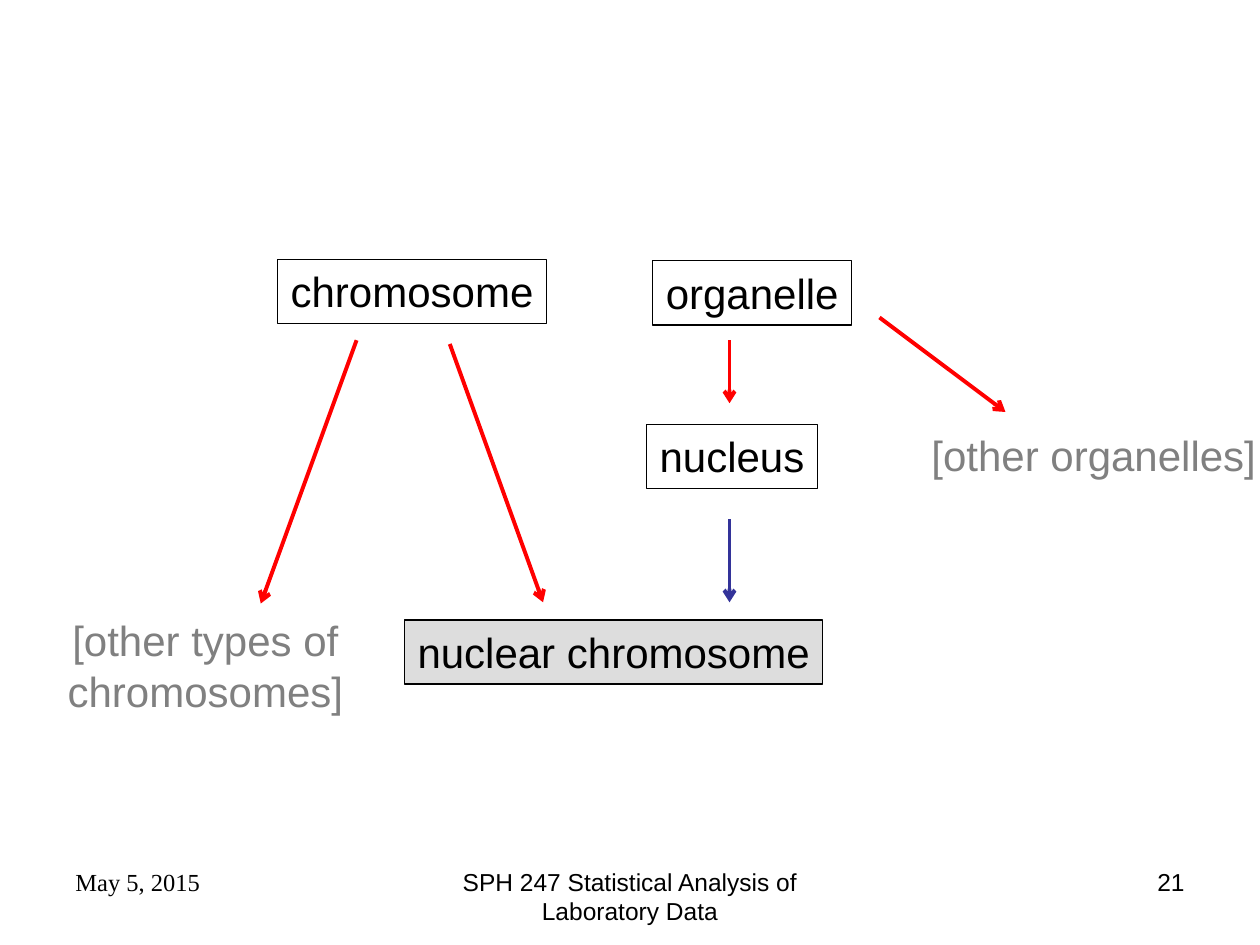
from lxml.etree import SubElement
from pptx import Presentation
from pptx.dml.color import RGBColor
from pptx.enum.shapes import MSO_CONNECTOR, MSO_SHAPE
from pptx.enum.text import MSO_ANCHOR, PP_ALIGN as Align
from pptx.oxml.ns import qn
from pptx.util import Inches, Pt

COLORS = {"ink": "000000", "muted": "808080", "result": "DDDDDD",
          "is_a": "FF0000", "part_of": "333399"}
BODY = {"size": Pt(24), "name": "Arial"}
FOOTER = {"size": Pt(14), "name": "Arial"}
DATE = {"size": Pt(14), "name": "Times New Roman"}


def color(name):
    """Return the named palette colour."""
    return RGBColor.from_string(COLORS[name])


def write(shape, text, font, align, ink="ink", wrap=True, anchor=MSO_ANCHOR.TOP):
    """Put one formatted paragraph into a shape."""
    frame = shape.text_frame
    frame.word_wrap = wrap
    frame.vertical_anchor = anchor
    para = frame.paragraphs[0]
    para.alignment = align
    span = para.add_run()
    span.text = text
    for key, value in font.items():
        setattr(span.font, key, value)
    span.font.color.rgb = color(ink)


def add_label(page, box, text, font, align, **options):
    """Add plain text in a box given in inches."""
    label = page.shapes.add_textbox(*map(Inches, box))
    write(label, text, font, align, **options)


def add_term(page, box, text, fill=None):
    """Add an outlined term in a box given in inches."""
    term = page.shapes.add_shape(MSO_SHAPE.RECTANGLE, *map(Inches, box))
    term.shadow.inherit = False
    if fill:
        term.fill.solid()
        term.fill.fore_color.rgb = color(fill)
    else:
        term.fill.background()
    term.line.color.rgb = color("ink")
    term.line.width = Pt(0.75)
    write(term, text, BODY, Align.CENTER, wrap=False)


def add_arrow(page, start, end, relation):
    """Add an arrow coloured by its relation."""
    arrow = page.shapes.add_connector(
        MSO_CONNECTOR.STRAIGHT, *map(Inches, start + end))
    arrow.line.color.rgb = color(relation)
    arrow.line.width = Pt(2.25)
    SubElement(arrow.line._get_or_add_ln(), qn("a:tailEnd"), type="arrow")
    SubElement(arrow._element.spPr, qn("a:effectLst"))


def add_graph(page, box):
    """Draw the term graph relative to its box."""
    left, top, width, height = box
    terms = [
        (1.97, 0, 2.14, "chromosome", None),
        (4.95, 0.01, 1.58, "organelle", None),
        (4.9, 1.31, 1.36, "nucleus", None),
        (2.98, 2.86, 3.32, "nuclear chromosome", "result"),
    ]
    others = [
        (0, 2.77, 2.8, 0.9, "[other types of chromosomes]", True),
        (7.06, 1.3, 2.78, 0.5, "[other organelles]", False),
    ]
    arrows = [
        (2.6, 0.64, 1.84, 2.73, "is_a"),
        (3.34, 0.67, 4.08, 2.72, "is_a"),
        (5.56, 0.64, 5.56, 1.14, "is_a"),
        (6.75, 0.46, 7.75, 1.21, "is_a"),
        (5.56, 2.06, 5.56, 2.72, "part_of"),
    ]
    for x, y, wide, text, fill in terms:
        add_term(page, (left + x, top + y, wide, 0.51), text, fill)
    for x, y, wide, high, text, wrap in others:
        add_label(page, (left + x, top + y, wide, high), text, BODY,
                  Align.CENTER, ink="muted", wrap=wrap)
    for x1, y1, x2, y2, relation in arrows:
        add_arrow(page, (left + x1, top + y1), (left + x2, top + y2), relation)


def add_footer(page, box):
    """Place date, course and page number across the box."""
    left, top, width, height = box
    side, middle = 2.33, 3.17
    parts = [
        (left, side, "May 5, 2015", DATE, Align.LEFT),
        (left + (width - middle) / 2, middle,
         "SPH 247 Statistical Analysis of Laboratory Data", FOOTER, Align.CENTER),
        (left + width - side, side, "21", FOOTER, Align.RIGHT),
    ]
    for x, wide, text, font, align in parts:
        add_label(page, (x, top, wide, height), text, font, align)


def main():
    """Build and save the slide."""
    deck = Presentation()
    deck.slide_width, deck.slide_height = Inches(10), Inches(7.5)
    page = deck.slides.add_slide(deck.slide_layouts[6])
    add_graph(page, (0.23, 2.06, 9.84, 3.67))
    add_footer(page, (0.5, 6.83, 9, 0.52))
    deck.save("out.pptx")


if __name__ == "__main__":
    main()
